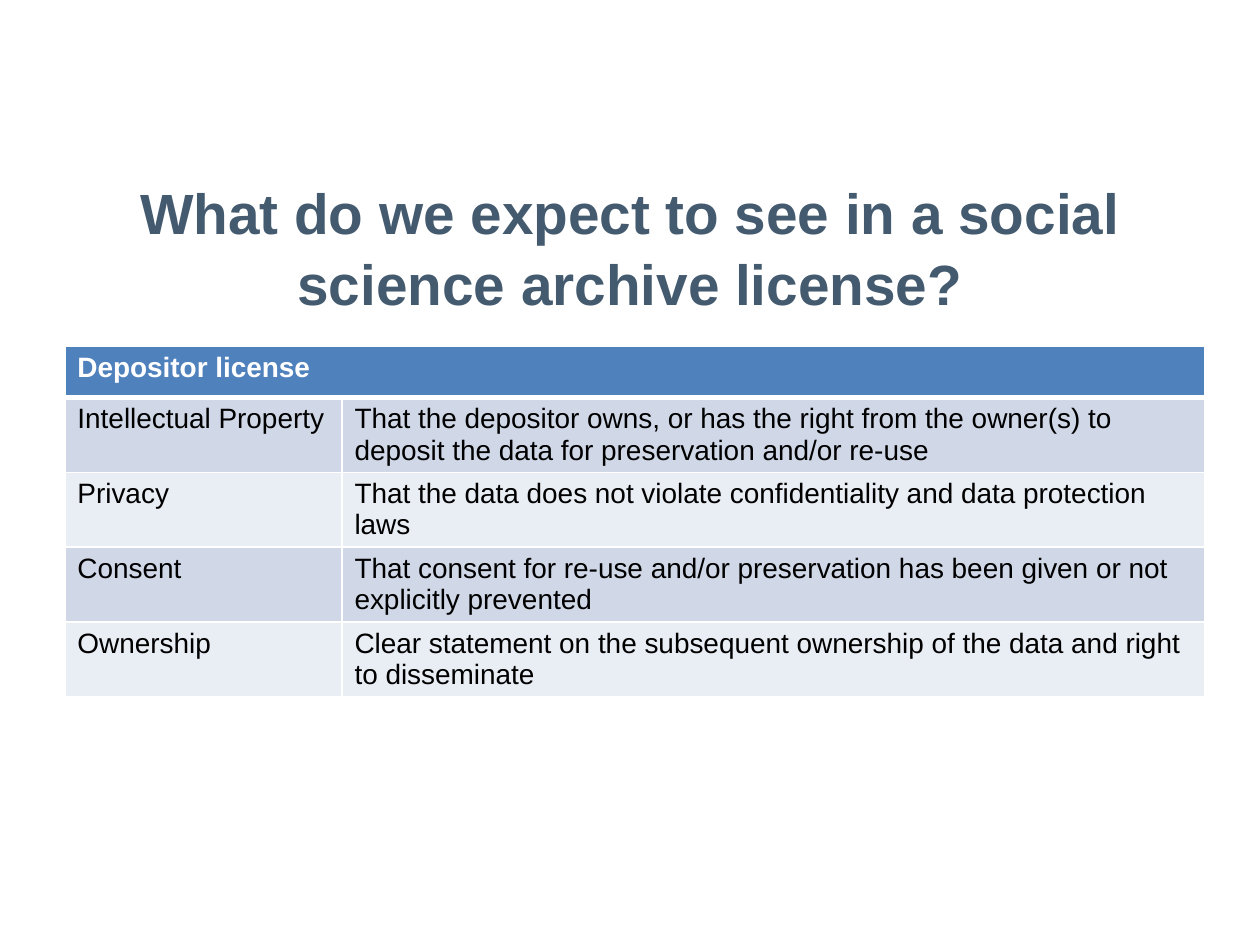
from dataclasses import dataclass

from lxml import etree
from pptx import Presentation
from pptx.dml.color import RGBColor
from pptx.enum.text import MSO_ANCHOR, MSO_AUTO_SIZE, PP_ALIGN
from pptx.oxml.ns import qn
from pptx.util import Inches, Pt

CENTER = PP_ALIGN.CENTER
MIDDLE = MSO_ANCHOR.MIDDLE
NO_AUTOFIT = MSO_AUTO_SIZE.NONE
TITLE_ONLY = 5


@dataclass(frozen=True)
class Theme:
    """Colours, font and type sizes of the slide."""
    font: str = "Arial"
    title_color: str = "445A6F"
    header_fill: str = "4F81BD"
    bands: tuple = ("D0D8E8", "E9EDF4")
    white: str = "FFFFFF"
    black: str = "000000"
    title_size: float = 32.4
    table_size: float = 16
    thin_line: float = 1
    thick_line: float = 3


THEME = Theme()
TITLE = "What do we expect to see in a social science archive license?"
TABLE_HEADER = "Depositor license"
TERMS = [
    ("Intellectual Property",
     "That the depositor owns, or has the right from the owner(s) to deposit "
     "the data for preservation and/or re-use"),
    ("Privacy",
     "That the data does not violate confidentiality and data protection laws"),
    ("Consent",
     "That consent for re-use and/or preservation has been given or not "
     "explicitly prevented"),
    ("Ownership",
     "Clear statement on the subsequent ownership of the data and right to "
     "disseminate"),
]


def style_paragraph(paragraph, size, color, bold):
    """Give every run of a paragraph the theme font, a size and a colour."""
    for run in paragraph.runs:
        run.font.name = THEME.font
        run.font.size = Pt(size)
        run.font.bold = bold
        run.font.color.rgb = RGBColor.from_string(color)


def add_border(cell, side, width):
    """Draw one white border of a cell."""
    properties = cell._tc.get_or_add_tcPr()
    line = etree.SubElement(properties, qn(f"a:ln{side}"), w=str(Pt(width)))
    fill = etree.SubElement(line, qn("a:solidFill"))
    etree.SubElement(fill, qn("a:srgbClr"), val=THEME.white)


def style_cell(cell, fill, color, bold, thick_side):
    """Set the borders, fill and text format of a cell."""
    for side in "LRTB":
        width = THEME.thick_line if side == thick_side else THEME.thin_line
        add_border(cell, side, width)
    cell.fill.solid()
    cell.fill.fore_color.rgb = RGBColor.from_string(fill)
    for paragraph in cell.text_frame.paragraphs:
        style_paragraph(paragraph, THEME.table_size, color, bold)


def place_title(slide, box, text):
    """Move the title placeholder into its box and format it."""
    title = slide.shapes.title
    title.left, title.top, title.width, title.height = box
    frame = title.text_frame
    frame.text = text
    frame.word_wrap = True
    frame.auto_size = NO_AUTOFIT
    frame.vertical_anchor = MIDDLE
    paragraph = frame.paragraphs[0]
    paragraph.alignment = CENTER
    paragraph.line_spacing = 1.04
    style_paragraph(paragraph, THEME.title_size, THEME.title_color, True)


def place_license_table(slide, box, header, terms):
    """Build the table of terms under a header that spans both columns."""
    left, top, width, height = box
    table = slide.shapes.add_table(len(terms) + 1, 2, left, top, width, height).table
    table.columns[0].width = int(width * 0.243)
    table.columns[1].width = width - table.columns[0].width
    header_height = int(height * 0.148)
    table.rows[0].height = header_height
    for row in list(table.rows)[1:]:
        row.height = (height - header_height) // len(terms)

    table.cell(0, 0).merge(table.cell(0, 1))
    table.cell(0, 0).text_frame.text = header
    for cell in table.rows[0].cells:
        style_cell(cell, THEME.header_fill, THEME.white, True, "B")

    for index, term in enumerate(terms):
        fill = THEME.bands[index % len(THEME.bands)]
        thick_side = "T" if index == 0 else None
        for cell, text in zip(table.rows[index + 1].cells, term):
            cell.text_frame.text = text
            style_cell(cell, fill, THEME.black, False, thick_side)


def main():
    """Build and save the one-slide presentation."""
    presentation = Presentation()
    presentation.slide_width = slide_width = Inches(10)
    presentation.slide_height = slide_height = Inches(7.5)
    slide = presentation.slides.add_slide(presentation.slide_layouts[TITLE_ONLY])

    def share_box(left, top, width, height):
        """Turn percentages of the slide into a box."""
        return (int(slide_width * left / 100), int(slide_height * top / 100),
                int(slide_width * width / 100), int(slide_height * height / 100))

    place_title(slide, share_box(5, 17.73, 90, 16.67), TITLE)
    place_license_table(slide, share_box(5.15, 36.6, 90.5, 36.93), TABLE_HEADER, TERMS)
    presentation.save("out.pptx")


if __name__ == "__main__":
    main()
